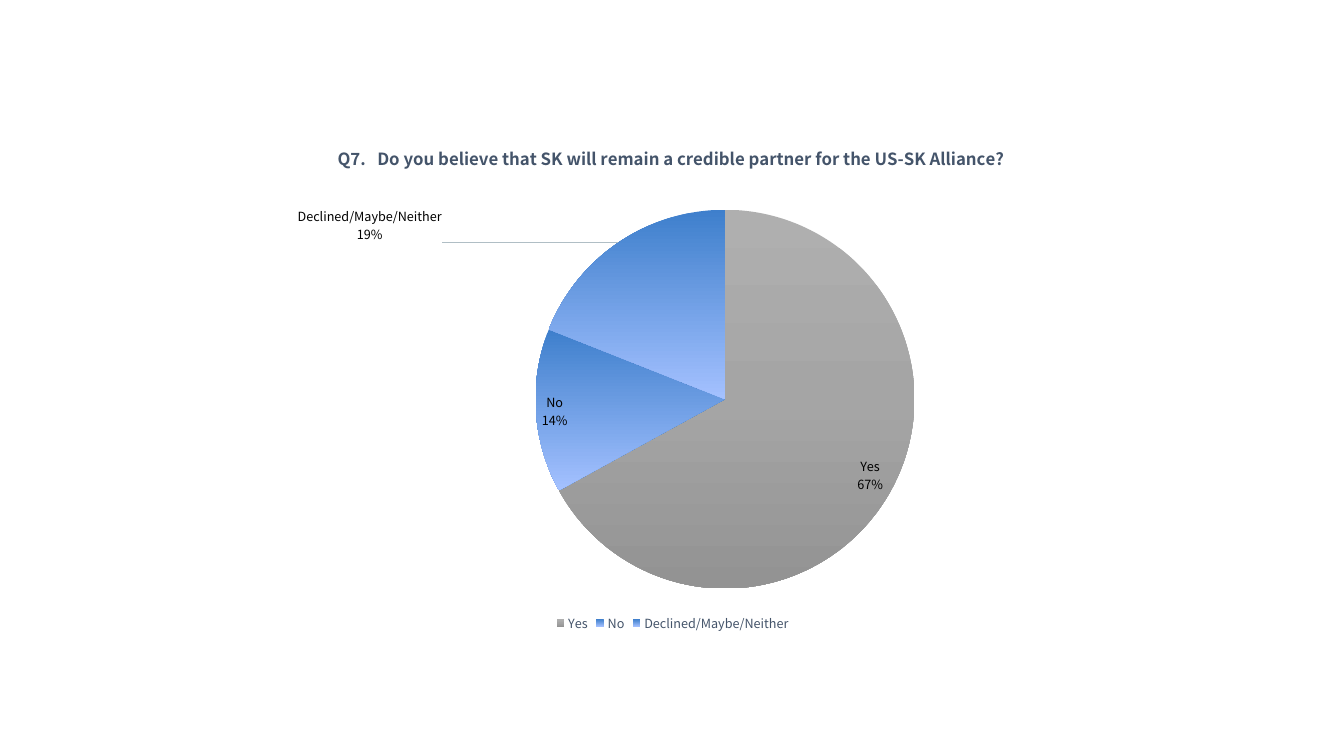
from dataclasses import dataclass

from lxml.etree import SubElement
from pptx import Presentation
from pptx.chart.data import CategoryChartData
from pptx.dml.color import RGBColor
from pptx.enum.chart import XL_CHART_TYPE, XL_LABEL_POSITION, XL_LEGEND_POSITION
from pptx.oxml import parse_xml
from pptx.oxml.ns import nsdecls, qn
from pptx.util import Inches, Pt


@dataclass(frozen=True)
class Theme:
    font: str = "Noto Sans CJK KR"
    ink: str = "000000"
    slate: str = "44546A"
    leader: str = "B0BEC5"
    title: int = 12
    small: int = 9
    slices: tuple = (
        ("6183CB", "3E70CA", "3062BB"),
        ("F18C57", "F67B28", "E56C19"),
        ("AFAFAF", "A5A5A5", "939393"),
    )


THEME = Theme()
QUESTION = "Q7.   Do you believe that SK will remain a credible partner for the US-SK Alliance?"
ANSWERS = {"Yes": 67, "No": 14, "Declined/Maybe/Neither": 19}


def style(font, size=THEME.small, color=THEME.ink, bold=False):
    font.name, font.size, font.bold = THEME.font, Pt(size), bold
    font.color.rgb = RGBColor.from_string(color)


def write(frame, text, **look):
    frame.text = text
    style(frame.paragraphs[0].runs[0].font, **look)


def layout(**parts):
    """Make a manual chart layout from fractions of the chart area."""
    tags = "".join(f'<c:{tag} val="{val}"/>' for tag, val in parts.items())
    return parse_xml(
        f'<c:layout {nsdecls("c")}><c:manualLayout>{tags}</c:manualLayout></c:layout>'
    )


def shade(point, colors):
    """Fill a slice with evenly spaced colours from top to bottom."""
    fill = point.format.fill
    fill.gradient()
    fill.gradient_angle = 270
    stops = point._element.find(".//" + qn("a:gsLst"))
    stops.clear()
    for step, color in enumerate(colors):
        stop = SubElement(stops, qn("a:gs"), pos=str(step * 50000))
        SubElement(stop, qn("a:srgbClr"), val=color)
    point.format.line.fill.background()


def add_title(chart):
    write(chart.chart_title.text_frame, QUESTION,
          size=THEME.title, color=THEME.slate, bold=True)
    title = chart.chart_title._element
    for old in title.findall(qn("c:layout")):
        title.remove(old)
    title.find(qn("c:tx")).addnext(
        layout(xMode="edge", yMode="edge", x=0.13, y=0.04))
    chart.chart_title.include_in_layout = False


def add_legend(chart):
    chart.has_legend = True
    chart.legend.position = XL_LEGEND_POSITION.BOTTOM
    chart.legend.include_in_layout = False
    style(chart.legend.font, color=THEME.slate)


def add_labels(plot):
    labels = plot.series[0].data_labels
    style(labels.font)
    labels.number_format, labels.number_format_is_linked = "0%", False
    labels.show_value = False
    labels.show_percentage = labels.show_category_name = True
    labels.position = XL_LABEL_POSITION.INSIDE_END
    root = labels._element
    for old in root.findall(qn("c:showLeaderLines")):
        root.remove(old)
    SubElement(root, qn("c:showLeaderLines"), val="1")
    root.append(parse_xml(
        f'<c:leaderLines {nsdecls("c", "a")}><c:spPr><a:ln w="9525"><a:solidFill>'
        f'<a:srgbClr val="{THEME.leader}"/></a:solidFill></a:ln></c:spPr></c:leaderLines>'
    ))
    pull_label(plot.series[0].points[len(ANSWERS) - 1].data_label)


def pull_label(label):
    """Move a label to the left of its slice, on a leader line."""
    style(label.font)
    label.position = XL_LABEL_POSITION.OUTSIDE_END
    root = label._dLbl
    root.find(qn("c:idx")).addnext(layout(x=-0.19, y=0.01))
    for tag, val in (("showVal", "0"), ("showCatName", "1"), ("showPercent", "1")):
        root.find(qn("c:" + tag)).set("val", val)


def add_pie(slide):
    data = CategoryChartData()
    data.categories = list(ANSWERS)
    data.add_series(QUESTION, list(ANSWERS.values()))
    chart = slide.shapes.add_chart(
        XL_CHART_TYPE.PIE, Inches(2.14), Inches(1.19), Inches(9.06), Inches(5.12), data
    ).chart
    style(chart.font, size=10)
    plot = chart.plots[0]
    plot.vary_by_categories = True
    add_title(chart)
    add_legend(chart)
    add_labels(plot)
    for spot, colors in enumerate(THEME.slices):
        shade(plot.series[0].points[spot], colors)
    area = chart._chartSpace.find(".//" + qn("c:plotArea"))
    for old in area.findall(qn("c:layout")):
        area.remove(old)
    area.insert(0, layout(layoutTarget="inner", xMode="edge", yMode="edge",
                          x=0.35, y=0.174, w=0.415, h=0.734))


def main():
    deck = Presentation()
    deck.slide_width, deck.slide_height = Inches(13.33), Inches(7.5)
    add_pie(deck.slides.add_slide(deck.slide_layouts[6]))
    deck.save("out.pptx")


if __name__ == "__main__":
    main()
